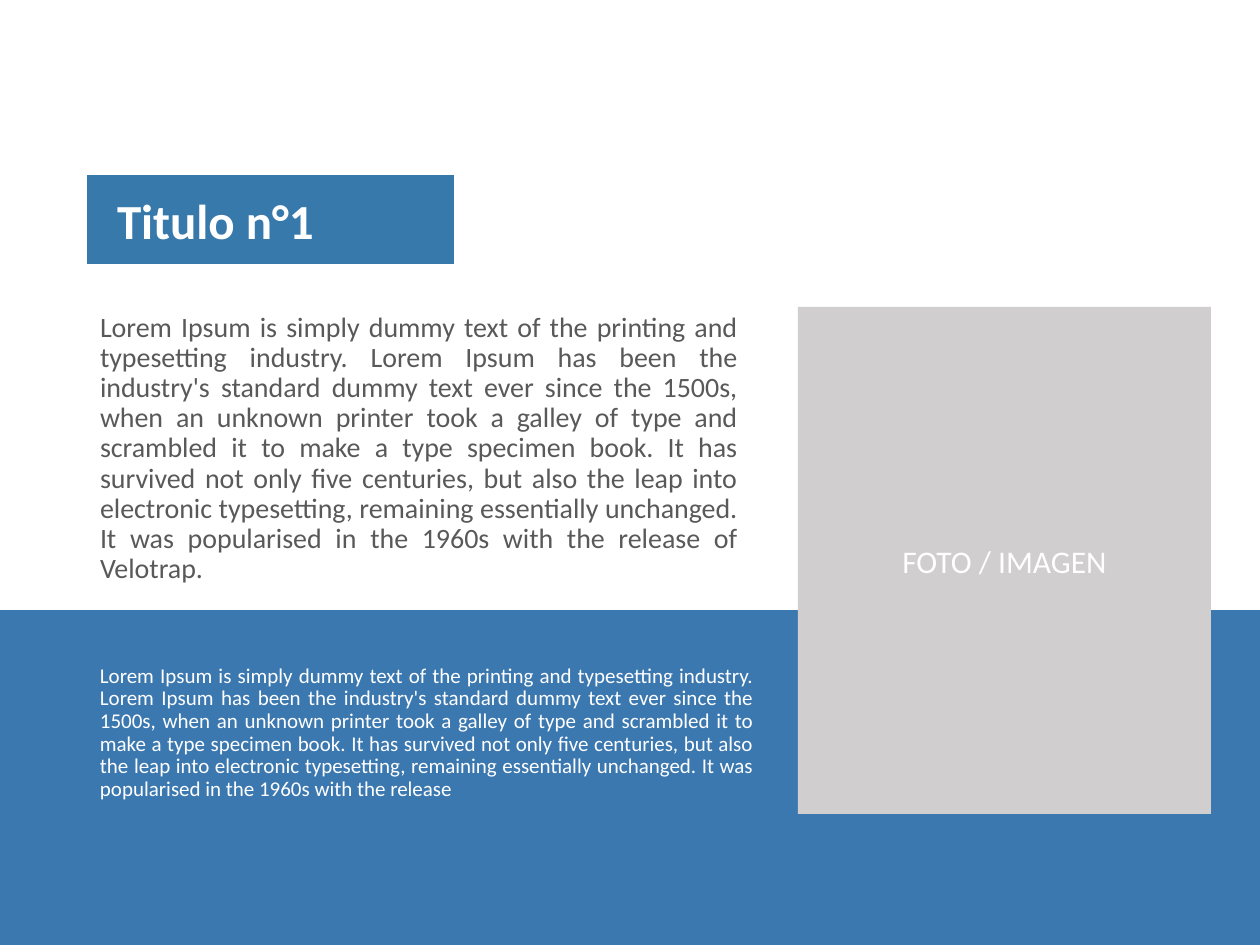
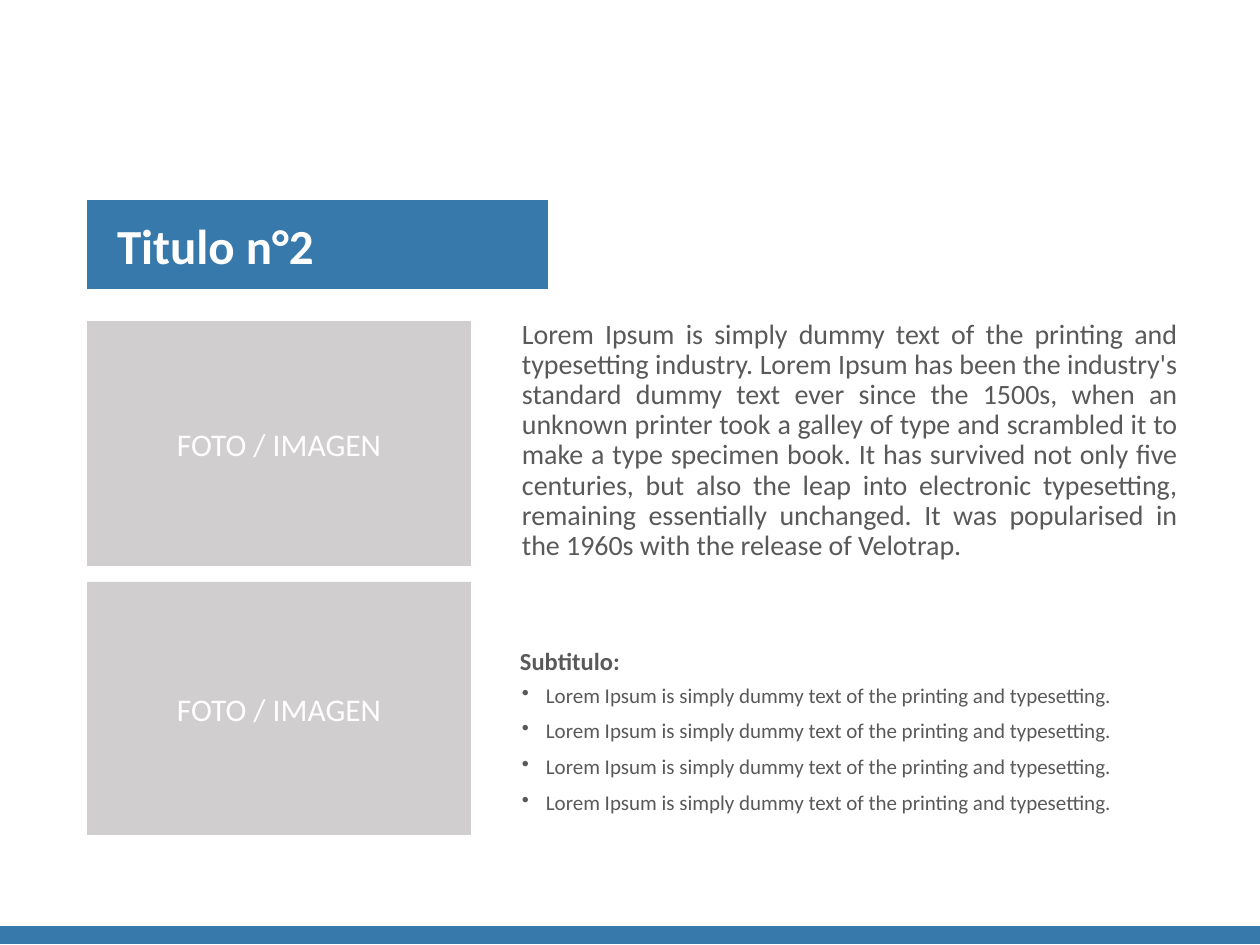
from pptx import Presentation
from pptx.dml.color import RGBColor
from pptx.enum.shapes import MSO_SHAPE
from pptx.enum.text import MSO_ANCHOR, MSO_AUTO_SIZE, PP_ALIGN
from pptx.util import Emu, Pt
from lxml import etree

EMU_PER_PX = 914400 / 126
SLIDE_W, SLIDE_H = 1260, 945
MARGIN = 87
TITLE_H = 89
BODY_H = 302

BLUE = RGBColor(0x38, 0x79, 0xAC)
PANEL_BLUE = RGBColor(0x3C, 0x78, 0xB0)
PHOTO_GREY = RGBColor(0xD0, 0xCE, 0xCE)
TEXT_GREY = RGBColor(0x59, 0x59, 0x59)
WHITE = RGBColor(0xFF, 0xFF, 0xFF)
FONT = "Calibri"

RECT = MSO_SHAPE.RECTANGLE
TOP, MIDDLE = MSO_ANCHOR.TOP, MSO_ANCHOR.MIDDLE
LEFT, CENTER, JUSTIFY = PP_ALIGN.LEFT, PP_ALIGN.CENTER, PP_ALIGN.JUSTIFY
NO_AUTOFIT = MSO_AUTO_SIZE.NONE
TITLE_ONLY = 5
DRAWING_NS = "http://schemas.openxmlformats.org/drawingml/2006/main"

SHORT_LOREM = (
    "Lorem Ipsum is simply dummy text of the printing and typesetting industry. "
    "Lorem Ipsum has been the industry's standard dummy text ever since the 1500s, "
    "when an unknown printer took a galley of type and scrambled it to make a type "
    "specimen book. It has survived not only five centuries, but also the leap into "
    "electronic typesetting, remaining essentially unchanged. It was popularised in "
    "the 1960s with the release"
)
LOREM = SHORT_LOREM + " of Velotrap."
BULLET = "Lorem Ipsum is simply dummy text of the printing and typesetting."


def px(n):
    return Emu(round(n * EMU_PER_PX))


def add_bullet(p, indent):
    pPr = p._p.get_or_add_pPr()
    pPr.set("marL", str(px(indent)))
    pPr.set("indent", str(-px(indent)))
    etree.SubElement(pPr, f"{{{DRAWING_NS}}}buChar").set("char", "•")


def set_text(tf, *lines, size, color=TEXT_GREY, bold=False, align=LEFT,
             anchor=TOP, spacing=1.0, inset=13, bullet=False):
    tf.word_wrap = True
    tf.auto_size = NO_AUTOFIT
    tf.vertical_anchor = anchor
    tf.margin_left = tf.margin_right = px(inset)
    tf.margin_top = tf.margin_bottom = px(6)
    for i, line in enumerate(lines):
        p = tf.add_paragraph() if i else tf.paragraphs[0]
        p.alignment = align
        p.line_spacing = spacing
        p.space_before = Pt(7.5 if i else 0)
        if bullet:
            add_bullet(p, 24)
        r = p.add_run()
        r.text = line
        r.font.name, r.font.size = FONT, Pt(size)
        r.font.bold = bold
        r.font.color.rgb = color


def add_text(s, box, *lines, **fmt):
    tf = s.shapes.add_textbox(*map(px, box)).text_frame
    set_text(tf, *lines, spacing=0.9, **fmt)


def add_rect(s, box, color):
    sp = s.shapes.add_shape(RECT, *map(px, box))
    sp.shadow.inherit = False
    sp.fill.solid()
    sp.fill.fore_color.rgb = color
    sp.line.fill.background()
    return sp


def add_title(s, box, text):
    title = s.shapes.title
    title.left, title.top, title.width, title.height = map(px, box)
    title.fill.solid()
    title.fill.fore_color.rgb = BLUE
    set_text(title.text_frame, text, size=28, color=WHITE, bold=True,
             anchor=MIDDLE, inset=30)


def add_photo(s, box):
    set_text(add_rect(s, box, PHOTO_GREY).text_frame, "FOTO / IMAGEN",
             size=18, color=WHITE, align=CENTER, anchor=MIDDLE)


def add_body(s, box):
    add_text(s, box, LOREM, size=16, align=JUSTIFY)


def add_panel(s, box):
    x, y, w, h = box
    add_rect(s, box, PANEL_BLUE)
    add_text(s, (x + MARGIN, y + 49, 680, 168), SHORT_LOREM,
             size=12, color=WHITE, align=JUSTIFY)


def add_subtitled_list(s, box):
    x, y, w, h = box
    add_text(s, (x, y, w, 47), "Subtitulo:", size=14, bold=True)
    add_text(s, (x + 2, y + 36, w, h - 36), *[BULLET] * 4,
             size=12, align=JUSTIFY, bullet=True)


# Text above a wide blue panel, with one tall photo
def build_panel_slide(prs):
    s = prs.slides.add_slide(prs.slide_layouts[TITLE_ONLY])
    add_title(s, (MARGIN, 175, 367, TITLE_H), "Titulo n°1")
    add_panel(s, (0, 610, SLIDE_W, SLIDE_H - 610))
    add_body(s, (MARGIN, 307, 664, BODY_H))
    add_photo(s, (798, 307, 413, 507))


# Two stacked photos beside text and a list, with the footer band
def build_list_slide(prs):
    s = prs.slides.add_slide(prs.slide_layouts[TITLE_ONLY])
    add_rect(s, (0, 926, SLIDE_W, 18), BLUE)
    add_title(s, (MARGIN, 200, 461, TITLE_H), "Titulo n°2")
    for top, height in ((321, 245), (582, 253)):
        add_photo(s, (MARGIN, top, 384, height))
    add_body(s, (509, 314, 682, BODY_H))
    add_subtitled_list(s, (507, 643, 665, 194))


def main():
    prs = Presentation()
    prs.slide_width, prs.slide_height = px(SLIDE_W), px(SLIDE_H)
    build_panel_slide(prs)
    build_list_slide(prs)
    prs.save("out.pptx")


if __name__ == "__main__":
    main()
